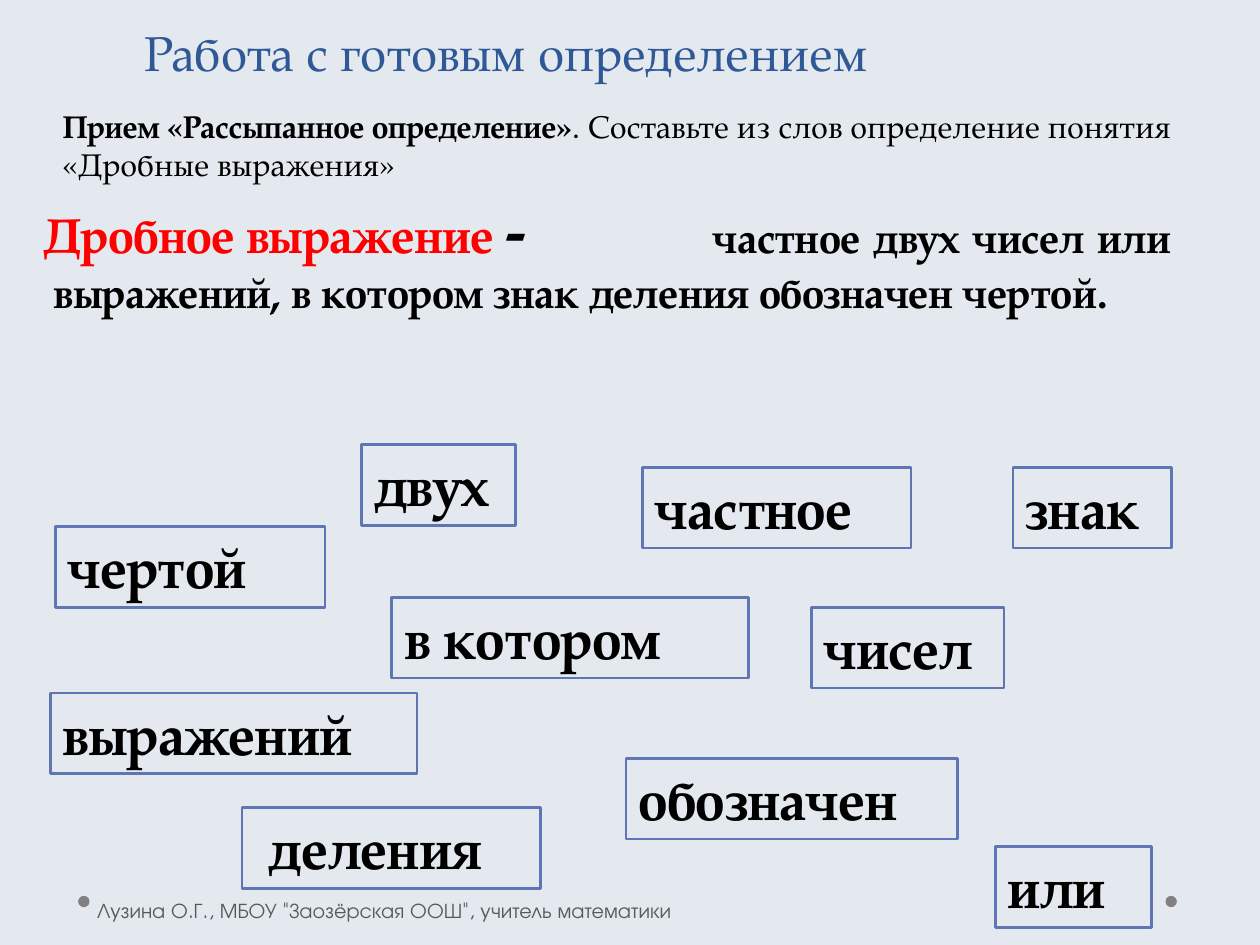
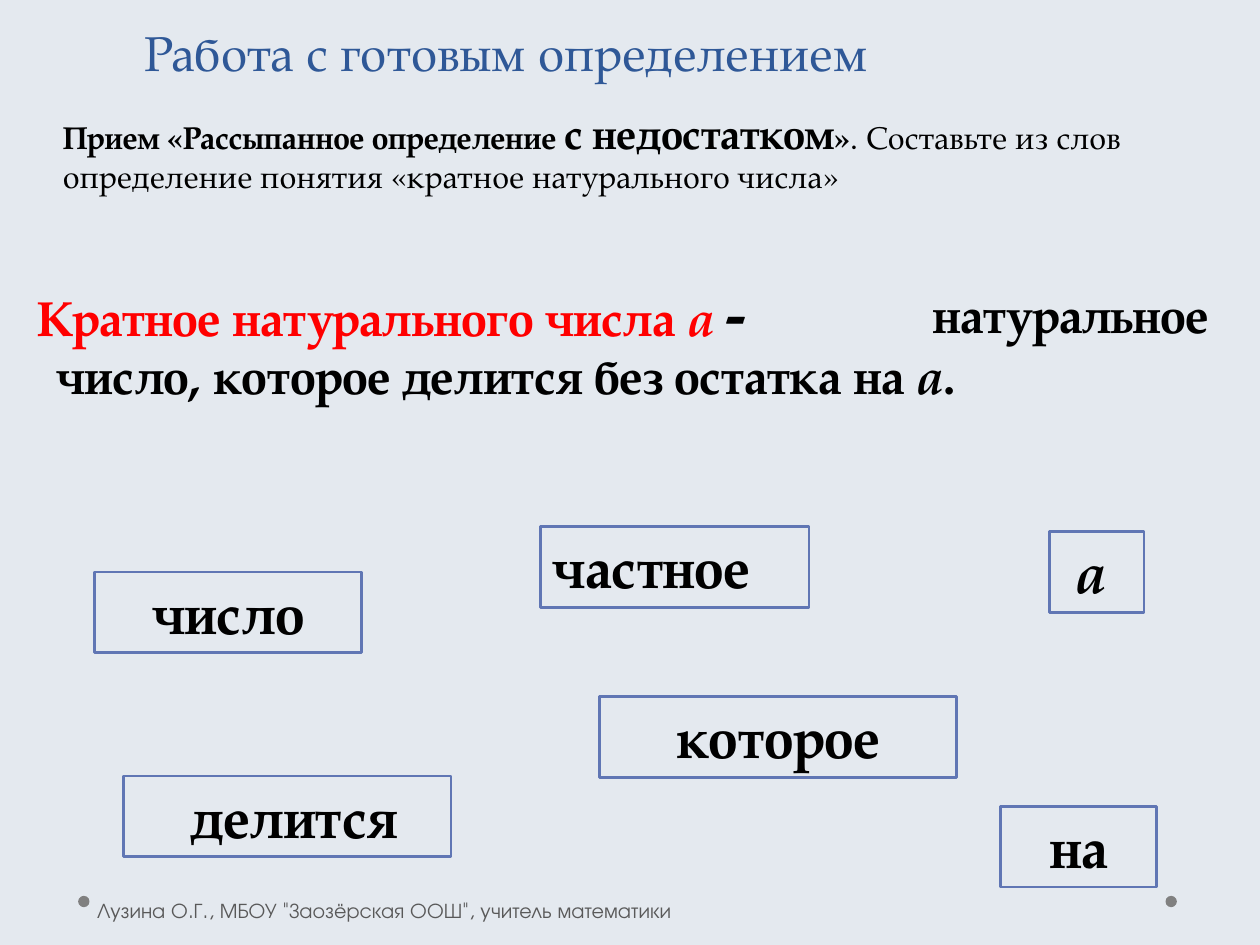
from dataclasses import dataclass

from pptx import Presentation
from pptx.dml.color import RGBColor
from pptx.enum.shapes import MSO_SHAPE as Preset
from pptx.enum.text import MSO_ANCHOR as Anchor, MSO_AUTO_SIZE as AutoSize, PP_ALIGN as Align
from pptx.util import Inches, Pt

BACKGROUND = RGBColor(0xE4, 0xE9, 0xEF)
DOT_GRAY = RGBColor(0x80, 0x80, 0x80)
CARD_BLUE = RGBColor(0x60, 0x76, 0xB4)
TITLE_BLUE = RGBColor(0x2F, 0x58, 0x97)
TERM_RED = RGBColor(0xFF, 0x00, 0x00)
FOOTER_GRAY = RGBColor(0x59, 0x59, 0x59)
BLACK = RGBColor(0x00, 0x00, 0x00)
SERIF = "TeX Gyre Pagella"
SANS = "TeX Gyre Adventor"
CARD_HEIGHT = 0.64
TITLE = "Работа с готовым определением"
FOOTER = 'Лузина О.Г., МБОУ "Заозёрская ООШ", учитель математики'


@dataclass(frozen=True)
class Span:
    text: str
    size: float | None = None
    bold: bool | None = None
    italic: bool | None = None
    color: RGBColor | None = None


@dataclass(frozen=True)
class Block:
    spans: tuple[Span, ...]
    left: float
    top: float
    width: float
    height: float
    size: float
    bold: bool = True
    color: RGBColor = BLACK
    font: str = SERIF
    align: Align = Align.JUSTIFY
    first_indent: float = 0
    line_pitch: float | None = None
    margin_left: float = 0.1
    margin_top: float = 0.05
    anchor: Anchor = Anchor.TOP
    fits_text: bool = True


@dataclass(frozen=True)
class Card:
    word: str
    left: float
    top: float
    width: float
    align: Align = Align.JUSTIFY
    italic: bool = False
    margin_left: float = 0.1


@dataclass(frozen=True)
class Exercise:
    texts: tuple[Block, ...]
    cards: tuple[Card, ...]
    footer_width: float


def task(height: float, *spans: Span) -> Block:
    """Return the instruction under the title."""
    return Block(spans, 0.4, 0.8, 9.33, height, 18, align=Align.LEFT)


EXERCISES = (
    Exercise(
        (
            Block((Span("частное двух чисел или выражений, в котором знак деления обозначен чертой."),),
                  0.33, 1.46, 9.06, 1.51, 24, first_indent=5.23, line_pitch=31.5, margin_top=0.18),
            Block((Span("Дробное выражение ", color=TERM_RED), Span("-", 36)),
                  0.25, 1.46, 9.06, 0.71, 28),
            task(0.71, Span("Прием «Рассыпанное определение»"),
                 Span(". Составьте из слов определение понятия «Дробные выражения»", bold=False)),
        ),
        (
            Card("или", 7.9, 6.72, 1.24),
            Card("частное", 5.1, 3.71, 2.13),
            Card("двух", 2.87, 3.53, 1.22),
            Card("чисел", 6.44, 4.82, 1.53),
            Card("выражений", 0.4, 5.5, 2.91),
            Card("в котором", 3.11, 4.74, 2.83),
            Card("знак", 8.04, 3.71, 1.26),
            Card("деления", 1.92, 6.41, 2.37, margin_left=0.21),
            Card("обозначен", 4.97, 6.02, 2.63),
            Card("чертой", 0.44, 4.18, 2.14),
        ),
        6.09,
    ),
    Exercise(
        (
            Block((Span("натуральное число, которое делится без остатка на "),
                   Span("а", italic=True), Span(".")),
                  0.35, 2.09, 9.38, 1.18, 28, first_indent=6.95, line_pitch=35, margin_top=0.15),
            Block((Span("Кратное натурального числа ", color=TERM_RED),
                   Span("а ", italic=True, color=TERM_RED), Span("-", 36)),
                  0.2, 2.12, 9.34, 0.71, 28),
            task(0.81, Span("Прием «Рассыпанное определение "), Span("с недостатком", 24), Span("»"),
                 Span(". Составьте из слов определение понятия «кратное натурального числа»", bold=False)),
        ),
        (
            Card("на", 7.94, 6.4, 1.24, Align.CENTER),
            Card("частное", 4.29, 4.18, 2.13),
            Card("а", 8.33, 4.22, 0.75, italic=True, margin_left=0.21),
            Card("которое", 4.76, 5.53, 2.83, Align.CENTER),
            Card("делится", 0.98, 6.16, 2.6, Align.CENTER, margin_left=0.21),
            Card("число", 0.75, 4.54, 2.12, Align.CENTER),
        ),
        6.41,
    ),
)


def fill_text(shape, block: Block) -> None:
    """Write the spans of a block into a shape."""
    frame = shape.text_frame
    frame.word_wrap = True
    frame.auto_size = AutoSize.SHAPE_TO_FIT_TEXT if block.fits_text else AutoSize.NONE
    frame.vertical_anchor = block.anchor
    frame.margin_left = Inches(block.margin_left)
    frame.margin_top = Inches(block.margin_top)
    paragraph = frame.paragraphs[0]
    paragraph.alignment = block.align
    if block.first_indent:
        paragraph._p.get_or_add_pPr().set("indent", str(Inches(block.first_indent)))
    if block.line_pitch:
        paragraph.line_spacing = Pt(block.line_pitch)
    font = paragraph.font
    font.name, font.size, font.bold = block.font, Pt(block.size), block.bold
    font.color.rgb = block.color
    for span in block.spans:
        run = paragraph.add_run()
        run.text = span.text
        run.font.bold, run.font.italic = span.bold, span.italic
        if span.size:
            run.font.size = Pt(span.size)
        run.font.color.rgb = span.color or block.color


def add_text(slide, block: Block) -> None:
    """Add a plain text block."""
    bounds = map(Inches, (block.left, block.top, block.width, block.height))
    fill_text(slide.shapes.add_textbox(*bounds), block)


def add_card(slide, card: Card) -> None:
    """Add an outlined card with one word."""
    bounds = (card.left, card.top, card.width, CARD_HEIGHT)
    outline = slide.shapes.add_shape(Preset.RECTANGLE, *map(Inches, bounds))
    outline.shadow.inherit = False
    outline.fill.background()
    outline.line.color.rgb = CARD_BLUE
    outline.line.width = Pt(1.5)
    fill_text(outline, Block((Span(card.word, italic=card.italic),), *bounds, 32,
                             align=card.align, margin_left=card.margin_left))


def add_dot(slide, left: float) -> None:
    """Add a gray dot beside the footer."""
    dot = slide.shapes.add_shape(Preset.OVAL, *map(Inches, (left, 7.11, 0.09, 0.09)))
    dot.shadow.inherit = False
    dot.fill.solid()
    dot.fill.fore_color.rgb = DOT_GRAY
    dot.line.fill.background()


def add_exercise(deck, exercise: Exercise) -> None:
    """Add one exercise slide."""
    slide = deck.slides.add_slide(deck.slide_layouts[6])
    slide.background.fill.solid()
    slide.background.fill.fore_color.rgb = BACKGROUND
    for left in (9.25, 0.62):
        add_dot(slide, left)
    for card in exercise.cards:
        add_card(slide, card)
    title = Block((Span(TITLE),), -0.67, 0.13, 9.37, 0.65, 28, False, TITLE_BLUE,
                  align=Align.CENTER, fits_text=False)
    footer = Block((Span(FOOTER),), 0.72, 6.95, exercise.footer_width, 0.55, 12, False,
                   FOOTER_GRAY, SANS, Align.LEFT, margin_left=0.05,
                   anchor=Anchor.MIDDLE, fits_text=False)
    for block in (*exercise.texts, title, footer):
        add_text(slide, block)


def main() -> None:
    """Build the deck."""
    deck = Presentation()
    deck.slide_width, deck.slide_height = Inches(10), Inches(7.5)
    for exercise in EXERCISES:
        add_exercise(deck, exercise)
    deck.save("out.pptx")


if __name__ == "__main__":
    main()
